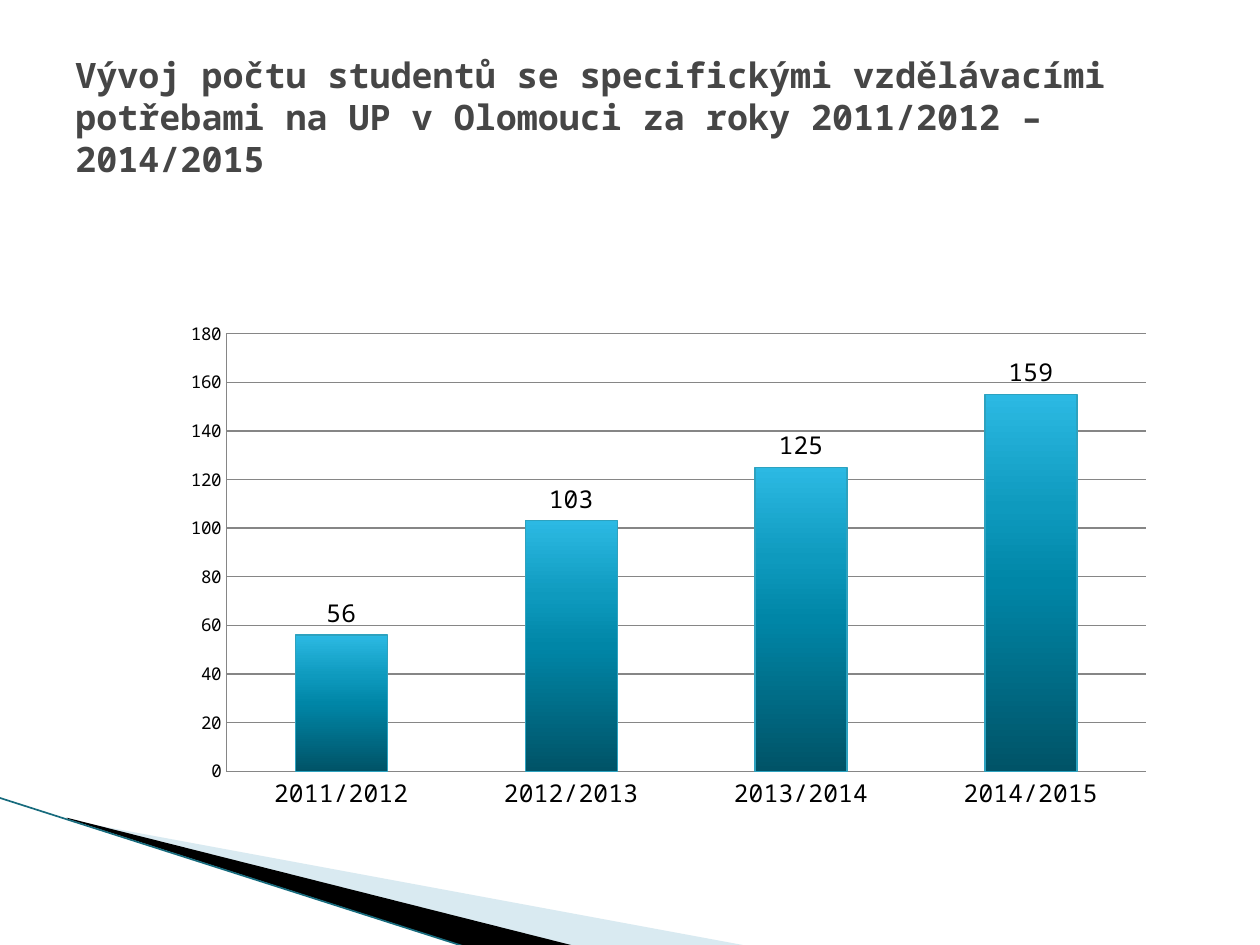
from lxml import etree
from pptx import Presentation
from pptx.chart.data import CategoryChartData
from pptx.dml.color import RGBColor
from pptx.enum.chart import XL_CHART_TYPE, XL_LABEL_POSITION, XL_TICK_MARK
from pptx.enum.shapes import MSO_CONNECTOR
from pptx.enum.text import MSO_ANCHOR
from pptx.oxml import parse_xml
from pptx.oxml.ns import nsdecls, qn
from pptx.util import Inches, Pt

COLUMN = XL_CHART_TYPE.COLUMN_CLUSTERED
OUTSIDE = XL_LABEL_POSITION.OUTSIDE_END
NO_TICK = XL_TICK_MARK.NONE
STRAIGHT = MSO_CONNECTOR.STRAIGHT
MIDDLE = MSO_ANCHOR.MIDDLE

FONT = "Noto Sans Mono"
BLACK = RGBColor(0x00, 0x00, 0x00)
TITLE_GRAY = RGBColor(0x46, 0x46, 0x46)
GRID_GRAY = RGBColor(0x86, 0x86, 0x86)
PALE_BLUE = RGBColor(0xA0, 0xCB, 0xDC)
EDGE_TEAL = RGBColor(0x17, 0x6B, 0x7D)
BAR_EDGE = RGBColor(0x2D, 0xA2, 0xBF)
BAR_STOPS = [(0, "005367"), (50, "0086A7"), (70, "0E9ABE"), (100, "2CB9E3")]

TITLE = ("Vývoj počtu studentů se specifickými vzdělávacími potřebami "
         "na UP v Olomouci za roky 2011/2012 – 2014/2015")
YEARS = ["2011/2012", "2012/2013", "2013/2014", "2014/2015"]
STUDENTS = [56, 103, 125, 155]
LAST_LABEL = "159"
PLOT = {"x": 0.117, "y": 0.218, "w": 0.883, "h": 0.689}
WEDGES = [
    ([(0.55, 6.51), (5.95, 7.51), (4.56, 7.51), (0.55, 6.5)], PALE_BLUE, 40),
    ([(0.53, 6.49), (4.57, 7.51), (3.72, 7.52), (0.54, 6.5)], BLACK, 100),
]


def style(font, size, color=BLACK, bold=False):
    font.name, font.size, font.bold = FONT, Pt(size), bold
    font.color.rgb = color


def add_wedge(slide, points, color, opacity):
    start, *rest = [(Inches(x), Inches(y)) for x, y in points]
    builder = slide.shapes.build_freeform(*start, scale=1.0)
    builder.add_line_segments(rest, close=True)
    s = builder.convert_to_shape()
    s.shadow.inherit = False
    s.fill.solid()
    s.fill.fore_color.rgb = color
    s.line.fill.background()
    if opacity < 100:
        clr = s._element.spPr.find(".//" + qn("a:srgbClr"))
        etree.SubElement(clr, qn("a:alpha")).set("val", str(opacity * 1000))


def add_edge(slide):
    line = slide.shapes.add_connector(
        STRAIGHT, Inches(-0.01), Inches(6.33), Inches(3.71), Inches(7.52))
    line.line.color.rgb = EDGE_TEAL
    line.line.width = Pt(0.95)
    etree.SubElement(line._element.spPr, qn("a:effectLst"))


def add_title(slide):
    box = slide.shapes.add_textbox(
        Inches(0.5), Inches(0.3), Inches(8.52), Inches(1.25))
    tf = box.text_frame
    tf.word_wrap = True
    tf.vertical_anchor = MIDDLE
    tf.text = TITLE
    style(tf.paragraphs[0].runs[0].font, 20, TITLE_GRAY, True)


def place_plot(chart):
    area = chart._chartSpace.chart.plotArea
    for old in area.findall(qn("c:layout")):
        area.remove(old)
    parts = "".join(f'<c:{k} val="{v}"/>' for k, v in PLOT.items())
    area.insert(0, parse_xml(
        f'<c:layout {nsdecls("c")}><c:manualLayout>'
        '<c:layoutTarget val="inner"/><c:xMode val="edge"/>'
        f'<c:yMode val="edge"/>{parts}</c:manualLayout></c:layout>'))


def paint_bars(series):
    series.format.line.color.rgb = BAR_EDGE
    series.format.line.width = Pt(0.75)
    stops = "".join(
        f'<a:gs pos="{pos * 1000}"><a:srgbClr val="{color}"/></a:gs>'
        for pos, color in BAR_STOPS)
    series._element.find(qn("c:spPr")).insert(0, parse_xml(
        f'<a:gradFill {nsdecls("a")} rotWithShape="1"><a:gsLst>{stops}'
        '</a:gsLst><a:lin ang="16200000" scaled="0"/></a:gradFill>'))


def add_student_chart(slide):
    data = CategoryChartData()
    data.categories = YEARS
    data.add_series("Series 1", STUDENTS)
    chart = slide.shapes.add_chart(
        COLUMN, Inches(0.83), Inches(1.55), Inches(8.27), Inches(5.04),
        data).chart
    chart.has_legend = chart.has_title = False
    style(chart.font, 10)
    place_plot(chart)

    years, counts = chart.category_axis, chart.value_axis
    style(years.tick_labels.font, 14)
    counts.minimum_scale, counts.maximum_scale, counts.major_unit = 0, 180, 20
    counts.has_major_gridlines = True
    for axis in (years, counts):
        axis.major_tick_mark = axis.minor_tick_mark = NO_TICK
    for part in (years, counts, counts.major_gridlines):
        part.format.line.color.rgb = GRID_GRAY
        part.format.line.width = Pt(0.75)

    plot = chart.plots[0]
    plot.gap_width = 150
    plot.vary_by_categories = False
    series = plot.series[0]
    paint_bars(series)
    labels = series.data_labels
    labels.show_value = True
    labels.position = OUTSIDE
    style(labels.font, 14)
    last = series.points[len(STUDENTS) - 1].data_label
    last.text_frame.text = LAST_LABEL
    style(last.text_frame.paragraphs[0].runs[0].font, 14)
    last.position = OUTSIDE


def main():
    prs = Presentation()
    prs.slide_width, prs.slide_height = Inches(10), Inches(7.5)
    slide = prs.slides.add_slide(prs.slide_layouts[6])
    for wedge in WEDGES:
        add_wedge(slide, *wedge)
    add_edge(slide)
    add_title(slide)
    add_student_chart(slide)
    prs.save("out.pptx")


if __name__ == "__main__":
    main()
